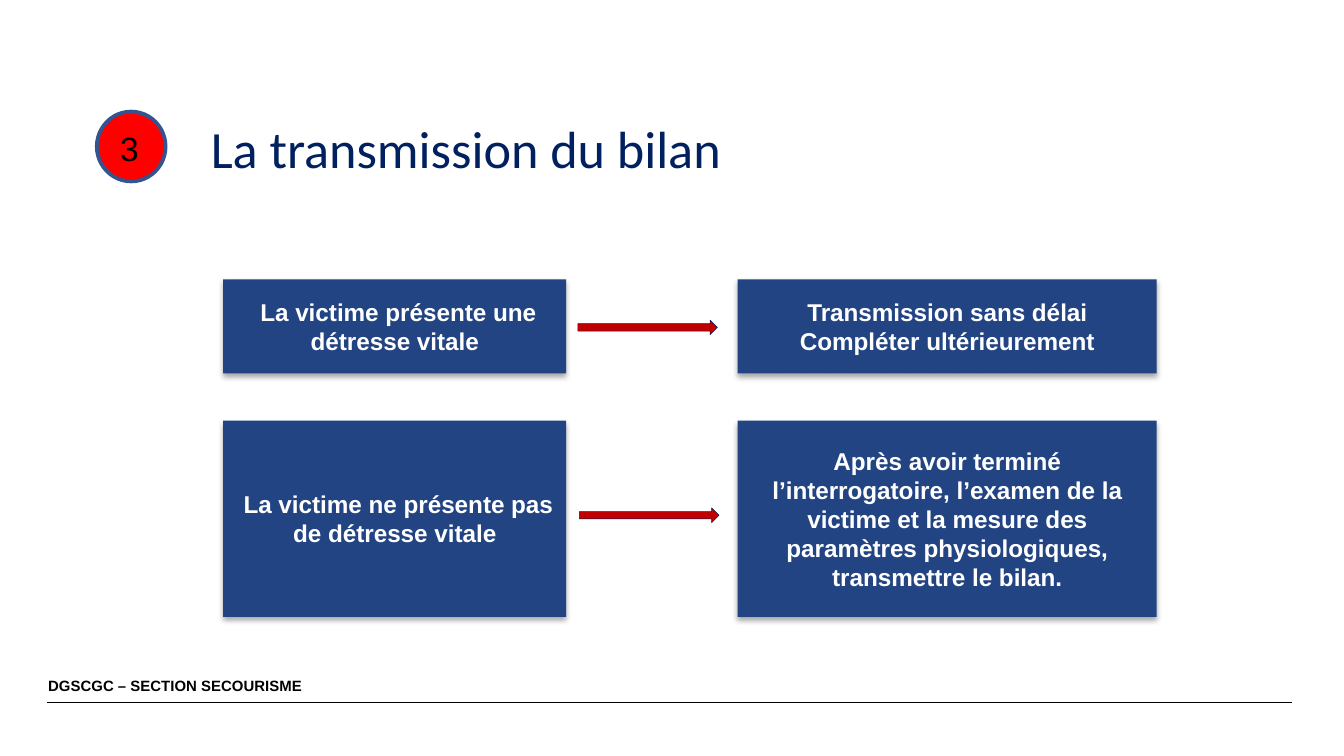
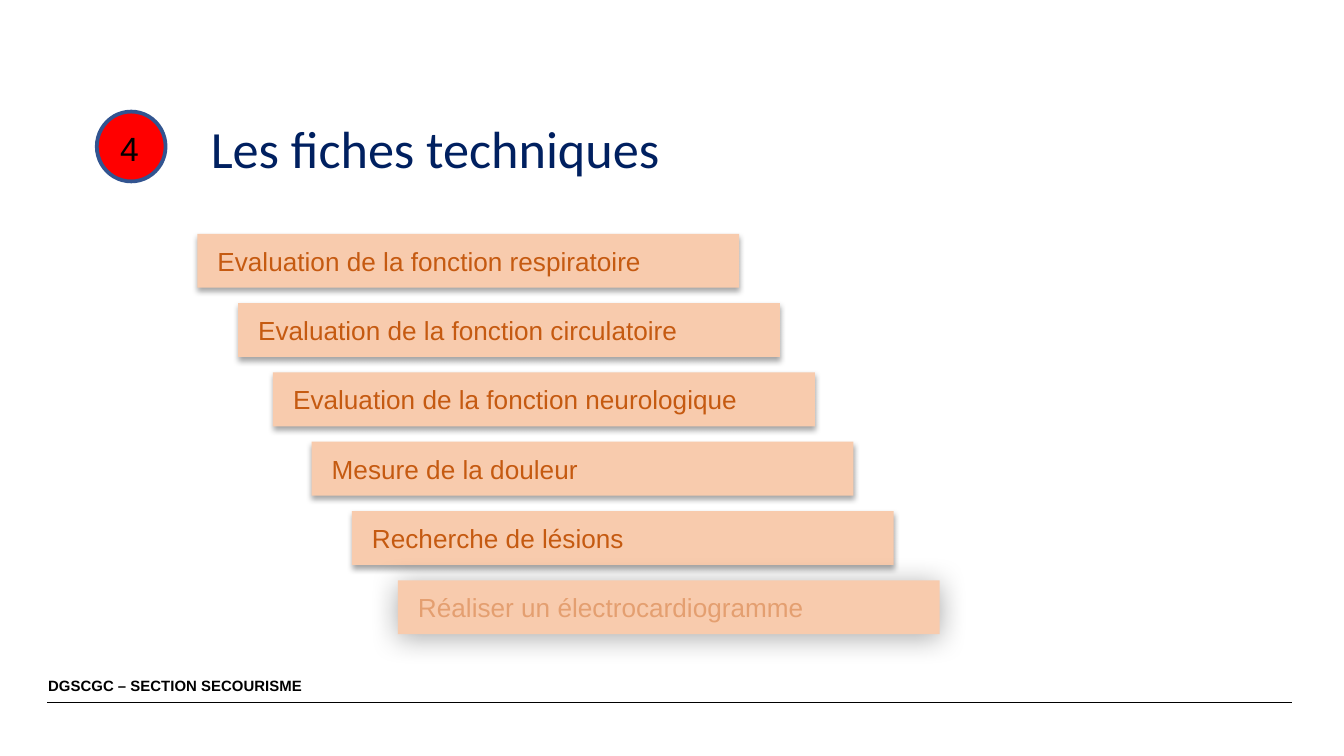
"""Builds two first-aid training slides: report handover and technique sheets."""
from lxml import etree
from pptx import Presentation
from pptx.dml.color import RGBColor
from pptx.enum.shapes import MSO_CONNECTOR as CONN, MSO_SHAPE as SHAPE
from pptx.enum.text import MSO_ANCHOR as ANCHOR, MSO_AUTO_SIZE as FIT, PP_ALIGN as ALIGN
from pptx.oxml.ns import qn
from pptx.util import Cm, Pt

BLACK = RGBColor(0x00, 0x00, 0x00)
WHITE = RGBColor(0xFF, 0xFF, 0xFF)
NAVY = RGBColor(0x00, 0x20, 0x60)
BLUE = RGBColor(0x22, 0x44, 0x83)
RING = RGBColor(0x32, 0x54, 0x90)
RED = RGBColor(0xFF, 0x00, 0x00)
DARK_RED = RGBColor(0xC0, 0x00, 0x00)
PEACH = RGBColor(0xF8, 0xCB, 0xAD)
RUST = RGBColor(0xC5, 0x5A, 0x11)

TITLE = {"name": "Calibri", "size": Pt(28), "bold": False}
NUMBER = {"name": "Arial", "size": Pt(18)}
CARD = {"name": "Arial", "size": Pt(13), "bold": True}
STEP = {"name": "Arial", "size": Pt(14)}
FOOTER = {"name": "Arial", "size": Pt(8), "bold": True}
INDENT = Cm(0.13)


class Deck:
    """Holds the shared style and the current slide."""

    def __init__(self):
        self.prs = Presentation()
        self.prs.slide_width, self.prs.slide_height = Cm(25.4), Cm(14.29)

    def slide(self, number, title):
        self.s = self.prs.slides.add_slide(self.prs.slide_layouts[5])
        self.rule(0.89, 24.31)
        self.rule(0.99, 24.41)
        self.title(title)
        self.badge(number)
        self.footer("DGSCGC – SECTION SECOURISME")

    def rule(self, x1, x2, y=13.28):
        line = self.s.shapes.add_connector(CONN.STRAIGHT, Cm(x1), Cm(y), Cm(x2), Cm(y))
        line.line.color.rgb = BLACK
        line.line.width = Pt(0.79)
        etree.SubElement(line._element.spPr, qn("a:effectLst"))

    def title(self, text):
        sp = self.s.shapes.title
        box = {"left": 3.73, "top": 1.85, "width": 16.69, "height": 1.68}
        for key, value in box.items():
            setattr(sp, key, Cm(value))
        sp.text_frame.auto_size = FIT.NONE
        self.put_text(sp, [text], TITLE, NAVY, anchor=ANCHOR.BOTTOM)
        sp.text_frame.paragraphs[0].line_spacing = 0.9

    def badge(self, number):
        sp = self.shape(SHAPE.OVAL, (1.83, 2.11, 1.3, 1.32), RED, RING, 2)
        self.put_text(sp, [number], NUMBER, BLACK, anchor=ANCHOR.TOP)

    def footer(self, text):
        sp = self.s.shapes.add_textbox(Cm(0.91), Cm(12.75), Cm(11.35), Cm(0.41))
        tf = sp.text_frame
        tf.margin_left = tf.margin_top = tf.margin_right = tf.margin_bottom = 0
        self.put_text(sp, [text], FOOTER, BLACK)

    def shape(self, kind, box, fill, line=None, width=0):
        sp = self.s.shapes.add_shape(kind, *map(Cm, box))
        sp.shadow.inherit = False
        sp.fill.solid()
        sp.fill.fore_color.rgb = fill
        if line is None:
            sp.line.fill.background()
        else:
            sp.line.color.rgb = line
            sp.line.width = Pt(width)
        return sp

    def panel(self, box, fill, blur=3.1, alpha=35):
        sp = self.shape(SHAPE.RECTANGLE, box, fill)
        effects = sp._element.spPr.find(qn("a:effectLst"))
        shadow = etree.SubElement(effects, qn("a:outerShdw"), blurRad=str(Pt(blur)),
                                  dist=str(Pt(1.8)), dir="5400000", rotWithShape="0")
        color = etree.SubElement(shadow, qn("a:srgbClr"), val=str(BLACK))
        self.alpha(color, alpha)
        return sp

    def card(self, box, lines, indent=0):
        self.put_text(self.panel(box, BLUE), lines, CARD, WHITE, ALIGN.CENTER, indent=indent)

    def step(self, box, text, faded=False):
        sp = self.panel(box, PEACH, 15, 32) if faded else self.panel(box, PEACH)
        self.put_text(sp, [text], STEP, RUST, indent=INDENT)
        if faded:
            for color in sp._element.txBody.iter(qn("a:srgbClr")):
                self.alpha(color, 38)

    def arrow(self, left, top):
        self.shape(SHAPE.RIGHT_ARROW, (left, top, 2.64, 0.28), DARK_RED, NAVY, 0.25)

    @staticmethod
    def alpha(color, percent):
        etree.SubElement(color, qn("a:alpha"), val=str(percent * 1000))

    @staticmethod
    def put_text(sp, lines, style, color, align=ALIGN.LEFT, anchor=ANCHOR.MIDDLE, indent=0):
        tf = sp.text_frame
        tf.word_wrap = True
        tf.vertical_anchor = anchor
        for i, text in enumerate(lines):
            p = tf.add_paragraph() if i else tf.paragraphs[0]
            p.alignment = align
            if indent:
                p._p.get_or_add_pPr().set("indent", str(indent))
            r = p.add_run()
            r.text = text
            for key, value in style.items():
                setattr(r.font, key, value)
            r.font.color.rgb = color


def main():
    deck = Deck()

    deck.slide("3", "La transmission du bilan")
    rows = [
        (5.28, 1.78, "La victime présente une détresse vitale",
         ["Transmission sans délai", "Compléter ultérieurement"], (10.92, 6.05)),
        (7.95, 3.71, "La victime ne présente pas de détresse vitale",
         ["Après avoir terminé l’interrogatoire, l’examen de la victime et la mesure "
          "des paramètres physiologiques, transmettre le bilan."], (10.95, 9.6)),
    ]
    for top, height, case, action, arrow in rows:
        deck.card((4.22, top, 6.48, height), [case], INDENT)
        deck.card((13.94, top, 7.92, height), action)
        deck.arrow(*arrow)

    deck.slide("4", "Les fiches techniques")
    steps = [
        (3.73, "Evaluation de la fonction respiratoire"),
        (4.5, "Evaluation de la fonction circulatoire"),
        (5.16, "Evaluation de la fonction neurologique"),
        (5.89, "Mesure de la douleur"),
        (6.65, "Recherche de lésions"),
        (7.52, "Réaliser un électrocardiogramme"),
    ]
    for i, (left, text) in enumerate(steps):
        deck.step((left, 4.42 + 1.31 * i, 10.24, 1.02), text, faded=i == len(steps) - 1)

    deck.prs.save("out.pptx")


if __name__ == "__main__":
    main()
